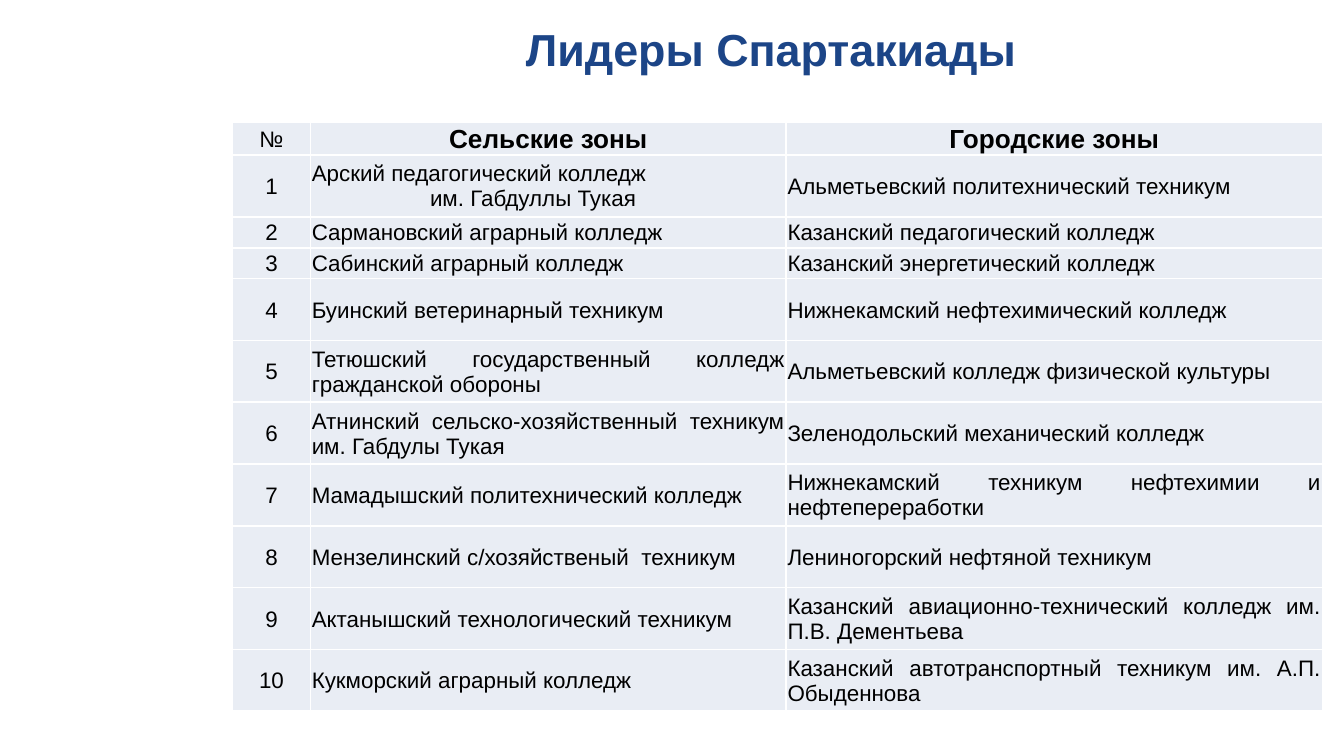
from pptx import Presentation
from pptx.dml.color import RGBColor
from pptx.enum.text import MSO_ANCHOR as Anchor, PP_ALIGN as Align
from pptx.oxml.ns import qn
from pptx.util import Inches, Pt
from lxml.etree import SubElement

# Content
TITLE = "Лидеры Спартакиады"
HEAD = ("№", "Сельские зоны", "Городские зоны")
LEADERS = [
    ("Арский педагогический колледж\nим. Габдуллы Тукая",
     "Альметьевский политехнический техникум"),
    ("Сармановский аграрный колледж", "Казанский педагогический колледж"),
    ("Сабинский аграрный колледж", "Казанский энергетический колледж"),
    ("Буинский ветеринарный техникум",
     "Нижнекамский нефтехимический колледж"),
    ("Тетюшский государственный колледж гражданской обороны",
     "Альметьевский колледж физической культуры"),
    ("Атнинский сельско-хозяйственный техникум им. Габдулы Тукая",
     "Зеленодольский механический колледж"),
    ("Мамадышский политехнический колледж",
     "Нижнекамский техникум нефтехимии и нефтепереработки"),
    ("Мензелинский с/хозяйственый  техникум",
     "Лениногорский нефтяной техникум"),
    ("Актанышский технологический техникум",
     "Казанский авиационно-технический колледж им. П.В. Дементьева"),
    ("Кукморский аграрный колледж",
     "Казанский автотранспортный техникум им. А.П. Обыденнова"),
]

# Style
FONT = "Arial"
NAVY = RGBColor(0x1C, 0x45, 0x87)
BLACK = RGBColor(0, 0, 0)
PALE = RGBColor(0xE9, 0xED, 0xF4)
BORDER = "FFFFFF"
WIDE = 10             # slide width, at 16:9
COLS = (0.58, 3.54, 3.99)
LINE = 0.23           # height of a one-line row
LOW = {0, 2, 3}       # rows with one line; the rest have two
INDENT = Inches(0.88)


def style(para, size, color, bold, align):
    para.alignment = align
    for run in para.runs:
        font = run.font
        font.name, font.size, font.bold = FONT, Pt(size), bold
        font.color.rgb = color


def add_border(cell):
    props = cell._tc.get_or_add_tcPr()
    for side in ("lnL", "lnR", "lnT", "lnB"):
        line = SubElement(props, qn(f"a:{side}"), w=str(Pt(1)))
        fill = SubElement(line, qn("a:solidFill"))
        SubElement(fill, qn("a:srgbClr"), val=BORDER)


def fill_cell(cell, text, size, bold, align):
    add_border(cell)
    cell.fill.solid()
    cell.fill.fore_color.rgb = PALE
    cell.vertical_anchor = Anchor.MIDDLE
    cell.margin_left = cell.margin_right = cell.margin_top = Inches(0.01)
    cell.margin_bottom = 0
    cell.text_frame.text = text
    for i, para in enumerate(cell.text_frame.paragraphs):
        style(para, size, BLACK, bold, align)
        if i:  # a second line is set in from the left
            para._p.get_or_add_pPr().set("marL", str(INDENT))


def add_title(slide):
    box = slide.shapes.add_textbox(Inches(0.94), Inches(-0.09),
                                   Inches(9.05), Inches(5.18))
    frame = box.text_frame
    frame.word_wrap = True
    frame.margin_left, frame.margin_top = Inches(0.64), Inches(0.25)
    frame.text = TITLE
    style(frame.paragraphs[0], 24, NAVY, True, Align.CENTER)


def add_leaders(slide):
    rows = [HEAD] + [(str(n), *pair) for n, pair in enumerate(LEADERS, 1)]
    highs = [LINE if r in LOW else 2 * LINE for r in range(len(rows))]
    table = slide.shapes.add_table(
        len(rows), len(COLS), Inches(1.73), Inches(0.91),
        Inches(sum(COLS)), Inches(sum(highs))).table
    for col, wide in zip(table.columns, COLS):
        col.width = Inches(wide)
    for r, (row, high) in enumerate(zip(rows, highs)):
        table.rows[r].height = Inches(high)
        for c, text in enumerate(row):
            big = r == 0 and c > 0
            align = Align.CENTER if r == 0 or c == 0 else Align.JUSTIFY
            fill_cell(table.cell(r, c), text, 14 if big else 12, big, align)


def main():
    deck = Presentation()
    deck.slide_width, deck.slide_height = Inches(WIDE), Inches(WIDE * 9 / 16)
    slide = deck.slides.add_slide(deck.slide_layouts[6])
    add_title(slide)
    add_leaders(slide)
    deck.save("out.pptx")


if __name__ == "__main__":
    main()
